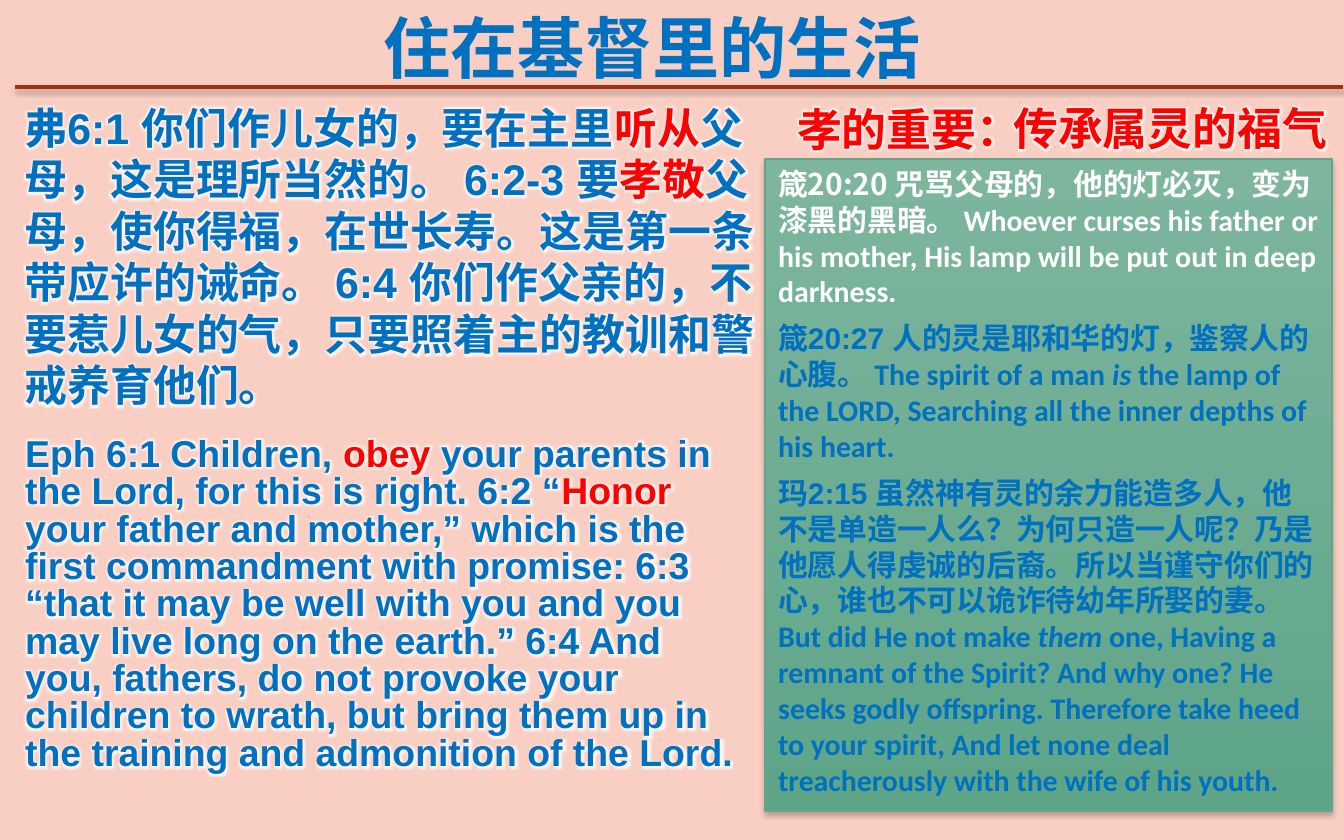
from dataclasses import dataclass
from typing import Optional

from lxml.etree import SubElement
from pptx import Presentation
from pptx.dml.color import RGBColor
from pptx.enum.shapes import MSO_CONNECTOR, MSO_SHAPE
from pptx.enum.text import MSO_ANCHOR, MSO_AUTO_SIZE, PP_ALIGN
from pptx.oxml.ns import qn
from pptx.util import Emu, Pt

BLUE = RGBColor(0x00, 0x70, 0xC0)
RED = RGBColor(0xFF, 0x00, 0x00)
WHITE = RGBColor(0xFF, 0xFF, 0xFF)
BLACK = RGBColor(0x00, 0x00, 0x00)
PINK = RGBColor(0xF9, 0xCF, 0xC3)
RUST = RGBColor(0xA5, 0x30, 0x10)
GREEN_TOP = RGBColor(0x7D, 0xB5, 0x9D)
GREEN_BOTTOM = RGBColor(0x5E, 0xA5, 0x88)
GREEN_EDGE = RGBColor(0x65, 0xA4, 0x8B)

CJK = "Noto Sans CJK SC"
EMU_PER_PX = 914400 / 134.4


@dataclass(frozen=True)
class Box:
    x: int
    y: int
    w: int
    h: int


@dataclass(frozen=True)
class Span:
    text: str
    color: RGBColor = BLUE
    font: str = "Arial"
    italic: bool = False


@dataclass(frozen=True)
class Block:
    box: Box
    size: int
    paragraphs: list[list[Span]]
    after: int = 0
    leading: Optional[int] = None
    halo: bool = True


def px(n: int) -> Emu:
    return Emu(round(n * EMU_PER_PX))


def bounds(box: Box) -> tuple[Emu, Emu, Emu, Emu]:
    return px(box.x), px(box.y), px(box.w), px(box.h)


def add_effect(parent, kind: str, color: RGBColor, alpha: int, **attrs: str) -> None:
    effects = SubElement(parent, qn("a:effectLst"))
    effect = SubElement(effects, qn(f"a:{kind}"), **attrs)
    clr = SubElement(effect, qn("a:srgbClr"), val=str(color))
    SubElement(clr, qn("a:alpha"), val=str(alpha * 1000))


def add_shadow(s) -> None:
    add_effect(s._element.spPr, "outerShdw", BLACK, 25, blurRad=str(Pt(3)),
               dist=str(Pt(2)), dir="5400000", rotWithShape="0")


def write(s, block: Block) -> None:
    tf = s.text_frame
    tf.word_wrap = True
    tf.auto_size = MSO_AUTO_SIZE.SHAPE_TO_FIT_TEXT
    tf.vertical_anchor = MSO_ANCHOR.TOP
    for i, spans in enumerate(block.paragraphs):
        p = tf.add_paragraph() if i else tf.paragraphs[0]
        p.alignment = PP_ALIGN.LEFT
        p.space_after = Pt(block.after)
        if block.leading:
            p.line_spacing = Pt(block.leading)
        for span in spans:
            r = p.add_run()
            r.text = span.text
            r.font.size = Pt(block.size)
            r.font.bold = True
            r.font.italic = span.italic
            r.font.color.rgb = span.color
            rpr = r._r.get_or_add_rPr()
            if block.halo:
                add_effect(rpr, "glow", WHITE, 80, rad=str(Pt(4)))
            r.font.name = span.font
            ea = SubElement(rpr, qn("a:ea"), typeface=CJK)
            rpr.find(qn("a:latin")).addnext(ea)


def add_text(slide, block: Block) -> None:
    write(slide.shapes.add_textbox(*bounds(block.box)), block)


def add_panel(slide, block: Block) -> None:
    s = slide.shapes.add_shape(MSO_SHAPE.RECTANGLE, *bounds(block.box))
    s.fill.gradient()
    s.fill.gradient_angle = 270
    for stop, color, pos in zip(s.fill.gradient_stops, (GREEN_TOP, GREEN_BOTTOM), (0, 1)):
        stop.color.rgb = color
        stop.position = pos
    s.line.color.rgb = GREEN_EDGE
    s.line.width = Pt(0.75)
    add_shadow(s)
    write(s, block)


def add_rule(slide, x1: int, x2: int, y: int) -> None:
    s = slide.shapes.add_connector(MSO_CONNECTOR.STRAIGHT, px(x1), px(y), px(x2), px(y))
    s.line.color.rgb = RUST
    s.line.width = Pt(1.75)
    add_shadow(s)


def english(text: str, color: RGBColor = BLUE, italic: bool = False) -> Span:
    return Span(text, color, "Calibri", italic)


def heading(x: int, y: int, w: int, text: str) -> Block:
    return Block(Box(x, y, w, 67), 24, [[Span(text, RED, "League Spartan")]])


TITLE = Block(Box(370, 0, 594, 95), 36, [[Span("住在基督里的生活")]], halo=False)

VERSES = [
    Block(Box(11, 95, 762, 325), 23, [[
        Span("弗6:1 你们作儿女的，要在主里"),
        Span("听从", RED),
        Span("父母，这是理所当然的。 6:2-3 要"),
        Span("孝敬", RED),
        Span("父母，使你得福，在世长寿。这是第一条带应许的诫命。 6:4 你们作父亲的，"
             "不要惹儿女的气，只要照着主的教训和警戒养育他们。"),
    ]], after=6),
    Block(Box(12, 431, 750, 353), 20, [[
        Span("Eph 6:1 Children, "),
        Span("obey", RED),
        Span(" your parents in the Lord, for this is right. 6:2 “"),
        Span("Honor", RED),
        Span(" your father and mother,” which is the first commandment with promise: 6:3 "
             "“that it may be well with you and you may live long on the earth.” 6:4 And "
             "you, fathers, do not provoke your children to wrath, but bring them up in "
             "the training and admonition of the Lord."),
    ]], leading=20),
]

PANEL = Block(Box(765, 159, 567, 652), 16, [
    [
        Span("箴20:20 咒骂父母的，他的灯必灭，变为漆黑的黑暗。 ", WHITE, CJK),
        english("Whoever curses his father or his mother, His lamp will be put out "
                "in deep darkness.", WHITE),
    ],
    [
        Span("箴20:27 人的灵是耶和华的灯，鉴察人的心腹。 "),
        english("The spirit of a man "),
        english("is", italic=True),
        english(" the lamp of the LORD, Searching all the inner depths of his heart."),
    ],
    [
        Span("玛2:15 虽然神有灵的余力能造多人，他不是单造一人么？为何只造一人呢？"
             "乃是他愿人得虔诚的后裔。所以当谨守你们的心，谁也不可以诡诈待幼年所娶的妻。 "),
        english("But did He not make"),
        english(" them ", italic=True),
        english("one, Having a remnant of the Spirit? And why one? He seeks godly "
                "offspring. Therefore take heed to your spirit, And let none deal "
                "treacherously with the wife of his youth."),
    ],
], after=6, halo=False)

HEADINGS = [
    heading(784, 95, 547, "孝的重要："),
    heading(1000, 94, 344, "传承属灵的福气"),
]


def main() -> None:
    prs = Presentation()
    prs.slide_width, prs.slide_height = px(1344), px(840)
    slide = prs.slides.add_slide(prs.slide_layouts[5])
    slide.background.fill.solid()
    slide.background.fill.fore_color.rgb = PINK

    title = slide.shapes.title
    title.left, title.top, title.width, title.height = bounds(TITLE.box)
    write(title, TITLE)
    add_rule(slide, 15, 1343, 87)
    for block in VERSES:
        add_text(slide, block)
    add_panel(slide, PANEL)
    for block in HEADINGS:
        add_text(slide, block)
    prs.save("out.pptx")


if __name__ == "__main__":
    main()
